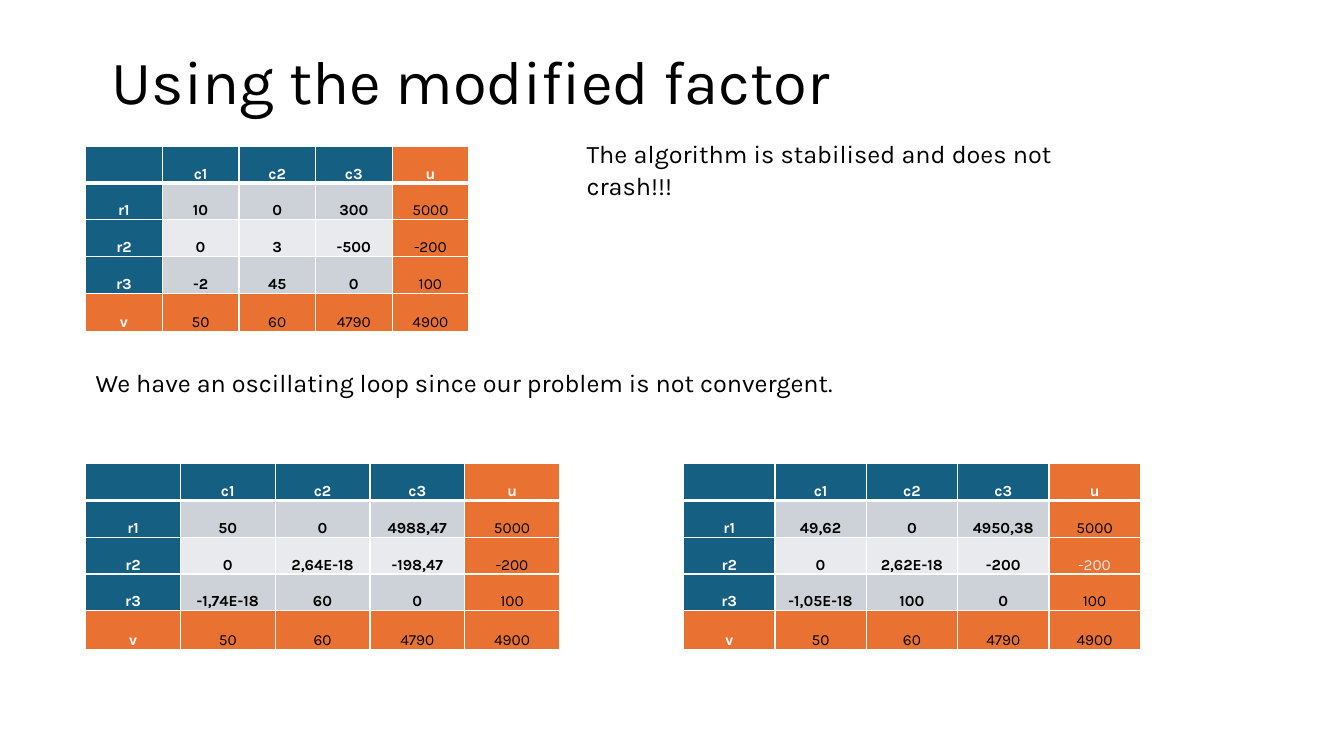
from dataclasses import dataclass

from lxml import etree
from pptx import Presentation
from pptx import util as u
from pptx.dml.color import RGBColor
from pptx.enum import text
from pptx.oxml import ns


@dataclass(frozen=True)
class Theme:
    font: str = "Karla"
    title: float = 44
    body: float = 18
    cell: float = 11
    black: str = "000000"
    white: str = "FFFFFF"
    faded: str = "E8E8E8"
    blue: str = "156082"
    orange: str = "E97132"
    bands: tuple[str, str] = ("CCD2D8", "E8EAED")


@dataclass(frozen=True)
class Note:
    text: str
    left: float
    top: float
    width: float
    height: float


@dataclass(frozen=True)
class CostTable:
    left: float
    top: float
    width: float
    costs: tuple[tuple[str, str, str], ...]
    side_inset: float = 0.01
    top_inset: float = 0.01
    faded_row: int | None = None


T = Theme()
HEADER = ("", "c1", "c2", "c3", "u")
SUPPLY = ("5000", "-200", "100")
DEMAND = ("v", "50", "60", "4790", "4900")
LAST = len(HEADER) - 1
TABLE_HEIGHT, LAST_ROW_HEIGHT = 1.84, 0.38

NOTES = (
    Note("The algorithm is stabilised and does not crash!!!", 5.72, 1.3, 4.81, 0.74),
    Note("We have an oscillating loop since our problem is not convergent.",
         0.85, 3.57, 11.99, 0.41),
)
TABLES = (
    CostTable(0.85, 1.45, 3.8,
              (("10", "0", "300"), ("0", "3", "-500"), ("-2", "45", "0")), 0.05, 0),
    CostTable(0.85, 4.6, 4.7,
              (("50", "0", "4988,47"), ("0", "2,64E-18", "-198,47"),
               ("-1,74E-18", "60", "0"))),
    CostTable(6.78, 4.6, 4.53,
              (("49,62", "0", "4950,38"), ("0", "2,62E-18", "-200"),
               ("-1,05E-18", "100", "0")), faded_row=2),
)


def add_run(p, words: str, size: float, color: str = T.black, bold: bool = False) -> None:
    r = p.add_run()
    r.text = words
    r.font.name = T.font
    r.font.size = u.Pt(size)
    r.font.bold = bold
    r.font.color.rgb = RGBColor.from_string(color)


def space_paragraph(p, align) -> None:
    p.alignment = align
    p.line_spacing = 1.07
    p.space_after = u.Pt(8)


def add_text_box(s, left: float, top: float, width: float, height: float):
    sp = s.shapes.add_textbox(*map(u.Inches, (left, top, width, height)))
    tf = sp.text_frame
    tf.word_wrap = True
    return tf


def add_title(s, words: str) -> None:
    tf = add_text_box(s, 1.01, 0.15, 11.32, 1.38)
    tf.vertical_anchor = text.MSO_ANCHOR.MIDDLE
    p = tf.paragraphs[0]
    p.line_spacing = 0.9
    add_run(p, words, T.title)


def add_note(s, note: Note) -> None:
    tf = add_text_box(s, note.left, note.top, note.width, note.height)
    tf.auto_size = text.MSO_AUTO_SIZE.SHAPE_TO_FIT_TEXT
    p = tf.paragraphs[0]
    space_paragraph(p, text.PP_ALIGN.JUSTIFY)
    add_run(p, note.text, T.body)


def set_borders(cell, row: int) -> None:
    """Draw thin white edges, with a thick one between header and first row."""
    tc_pr = cell._tc.get_or_add_tcPr()
    thick_edge = {0: "lnB", 1: "lnT"}.get(row)
    for edge in ("lnL", "lnR", "lnT", "lnB"):
        points = 3 if edge == thick_edge else 1
        ln = etree.SubElement(tc_pr, ns.qn(f"a:{edge}"), w=str(u.Pt(points)))
        fill = etree.SubElement(ln, ns.qn("a:solidFill"))
        etree.SubElement(fill, ns.qn("a:srgbClr"), val=T.white)


def cell_fill(row: int, col: int) -> str:
    if row == LAST or col == LAST:
        return T.orange
    if row == 0 or col == 0:
        return T.blue
    return T.bands[(row - 1) % 2]


def add_cost_table(s, spec: CostTable) -> None:
    values = [HEADER]
    for i, (costs, supply) in enumerate(zip(spec.costs, SUPPLY), start=1):
        values.append((f"r{i}", *costs, supply))
    values.append(DEMAND)

    size = len(HEADER)
    frame = s.shapes.add_table(size, size, *map(
        u.Inches, (spec.left, spec.top, spec.width, TABLE_HEIGHT)))
    table = frame.table
    table.first_row = table.horz_banding = False
    for col in table.columns:
        col.width = u.Inches(spec.width / size)
    for i, row in enumerate(table.rows):
        row.height = u.Inches(
            LAST_ROW_HEIGHT if i == LAST else (TABLE_HEIGHT - LAST_ROW_HEIGHT) / LAST)

    for i, row_values in enumerate(values):
        for j, value in enumerate(row_values):
            cell = table.cell(i, j)
            is_label = i == 0 or j == 0
            is_cost = not is_label and i < LAST and j < LAST
            side = spec.side_inset if is_cost else 0.05
            cell.margin_left = cell.margin_right = u.Inches(side)
            cell.margin_top = u.Inches(spec.top_inset if is_cost else 0)
            cell.margin_bottom = 0
            cell.vertical_anchor = text.MSO_ANCHOR.BOTTOM
            set_borders(cell, i)
            cell.fill.solid()
            cell.fill.fore_color.rgb = RGBColor.from_string(cell_fill(i, j))
            if not value:
                continue
            color = T.white if is_label else T.black
            if i == spec.faded_row and j == LAST:
                color = T.faded
            p = cell.text_frame.paragraphs[0]
            space_paragraph(p, text.PP_ALIGN.CENTER)
            add_run(p, value, T.cell, color, is_label or is_cost)


def main() -> None:
    prs = Presentation()
    prs.slide_width, prs.slide_height = u.Inches(13.33), u.Inches(7.5)
    s = prs.slides.add_slide(prs.slide_layouts[6])
    add_title(s, "Using the modified factor")
    for table in TABLES:
        add_cost_table(s, table)
    for note in NOTES:
        add_note(s, note)
    prs.save("out.pptx")


if __name__ == "__main__":
    main()
